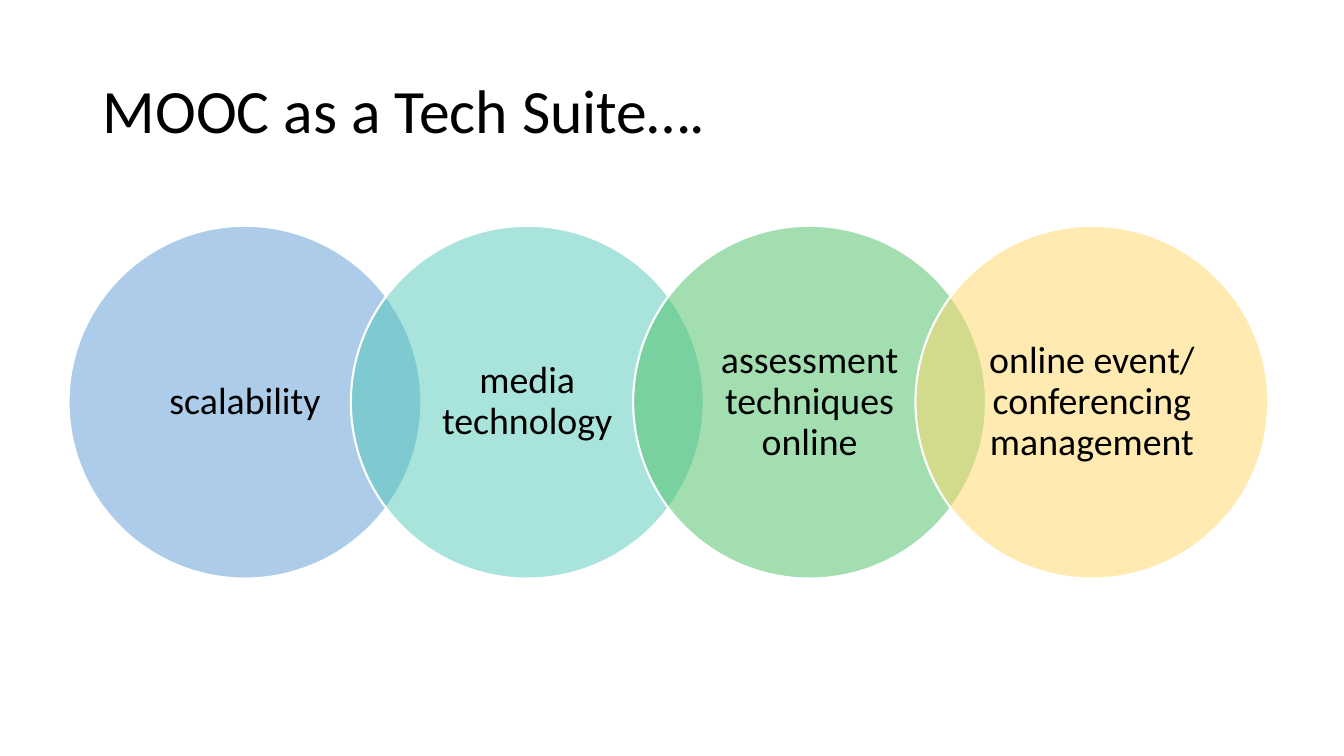
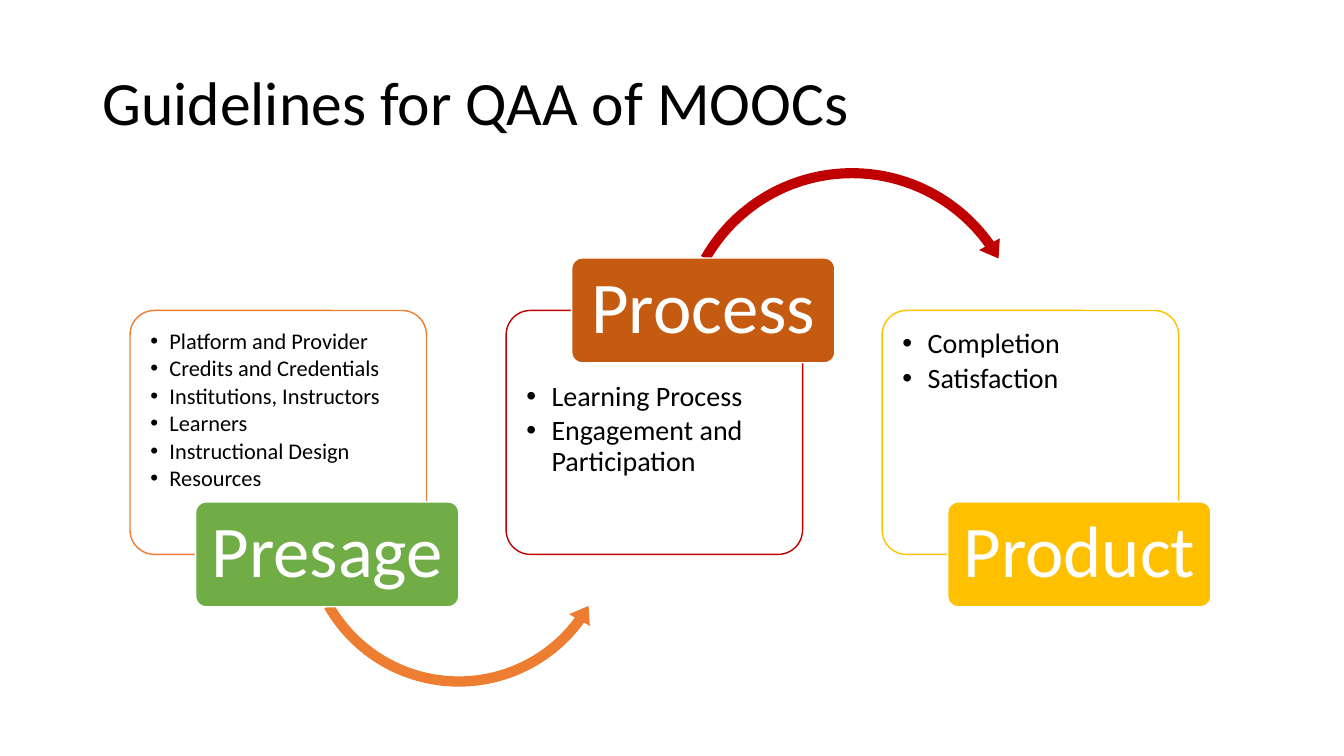
from dataclasses import dataclass

from lxml.etree import SubElement
from pptx import Presentation
from pptx.dml.color import RGBColor
from pptx.enum.shapes import MSO_SHAPE
from pptx.enum.text import MSO_ANCHOR, PP_ALIGN
from pptx.oxml.ns import qn
from pptx.util import Inches, Pt


@dataclass(frozen=True)
class Theme:
    font: str = "Calibri"
    black: str = "000000"
    white: str = "FFFFFF"
    blue: str = "5B9BD5"
    teal: str = "52CAB8"
    mint: str = "49BF64"
    sand: str = "FFD966"
    orange: str = "ED7D31"
    green: str = "70AD47"
    red: str = "C00000"
    rust: str = "C55A11"
    gold: str = "FFC000"
    title: int = 44
    ring: int = 27
    tag: int = 52
    body: int = 20
    small: int = 16


def text(frame, lines, size, color, font, align=PP_ALIGN.LEFT,
         anchor=MSO_ANCHOR.MIDDLE, pad=(0.1, 0.05, 0.1, 0.05), hang=0):
    """Fill a text frame; a hang above zero makes each line a bullet."""
    frame.word_wrap = True
    frame.vertical_anchor = anchor
    (frame.margin_left, frame.margin_top,
     frame.margin_right, frame.margin_bottom) = map(Inches, pad)
    for i, line in enumerate(lines):
        para = frame.add_paragraph() if i else frame.paragraphs[0]
        para.alignment = align
        para.line_spacing = 0.9
        if hang:
            para.space_after = Pt(size * 0.15)
            props = para._p.get_or_add_pPr()
            props.set("marL", str(Inches(hang)))
            props.set("indent", str(-Inches(hang)))
            SubElement(props, qn("a:buFont"), typeface="Arial")
            SubElement(props, qn("a:buChar"), char="•")
        run = para.add_run()
        run.text = line
        run.font.name = font
        run.font.size = Pt(size)
        run.font.color.rgb = RGBColor.from_string(color)


class Deck:
    def __init__(self, look):
        self.look = look
        self.file = Presentation()
        self.file.slide_width = Inches(13.33)
        self.file.slide_height = Inches(7.5)
        self.slide = None

    def page(self, title, top):
        """Start a slide with its title."""
        self.slide = self.file.slides.add_slide(self.file.slide_layouts[6])
        box = self.slide.shapes.add_textbox(
            Inches(0.92), Inches(top), Inches(11.5), Inches(1.45))
        text(box.text_frame, [title], self.look.title, self.look.black,
             self.look.font)

    def shape(self, kind, at, fill, line=None, width=1, alpha=100, adj=()):
        item = self.slide.shapes.add_shape(kind, *map(Inches, at))
        item.shadow.inherit = False
        for i, value in enumerate(adj):
            item.adjustments[i] = value
        item.fill.solid()
        item.fill.fore_color.rgb = RGBColor.from_string(fill)
        if alpha < 100:
            color = item.element.spPr.find(qn("a:solidFill"))[0]
            SubElement(color, qn("a:alpha"), val=str(alpha * 1000))
        if line:
            item.line.color.rgb = RGBColor.from_string(line)
            item.line.width = Pt(width)
        else:
            item.line.fill.background()
        return item

    def ring(self, left, label, fill):
        look = self.look
        item = self.shape(MSO_SHAPE.OVAL, (left, 2.24, 3.5, 3.5), fill,
                          look.white, width=1.5, alpha=50)
        text(item.text_frame, [label], look.ring, look.black, look.font,
             align=PP_ALIGN.CENTER, pad=(0.19, 0.04, 0.19, 0.04))

    def card(self, at, lines, edge, size, hang, drop):
        look = self.look
        item = self.shape(MSO_SHAPE.ROUNDED_RECTANGLE, at, look.white, edge,
                          alpha=90, adj=[0.1])
        text(item.text_frame, lines, size, look.black, look.font,
             anchor=MSO_ANCHOR.TOP, pad=(0.13, drop, 0.13, 0.1), hang=hang)

    def tag(self, left, mid, label, fill):
        """Draw a stage name centred on the height mid."""
        look = self.look
        high = 1.04
        item = self.shape(MSO_SHAPE.ROUNDED_RECTANGLE,
                          (left, mid - high / 2, 2.61, high), fill,
                          look.white, adj=[0.1])
        text(item.text_frame, [label], look.tag, look.white, look.font,
             align=PP_ALIGN.CENTER, pad=(0.1, 0.07, 0.1, 0.07))


def suite(deck):
    look = deck.look
    deck.page("MOOC as a Tech Suite….", 0.4)
    rings = [
        ("scalability", look.blue),
        ("media technology", look.teal),
        ("assessment techniques online", look.mint),
        ("online event/ conferencing management", look.sand),
    ]
    for i, (label, fill) in enumerate(rings):
        deck.ring(0.68 + 2.8 * i, label, fill)


def guide(deck):
    look = deck.look
    deck.page("Guidelines for QAA of MOOCs", 0.32)
    top, wide, high = 3.08, 2.94, 2.42
    # Each stage: name, tag fill, card edge, tag on top, type size, hang, lines
    stages = [
        ("Presage", look.green, look.orange, False, look.small, 0.19,
         ["Platform and Provider", "Credits and Credentials",
          "Institutions, Instructors", "Learners", "Instructional Design",
          "Resources"]),
        ("Process", look.rust, look.red, True, look.body, 0.25,
         ["Learning Process", "Engagement and Participation"]),
        ("Product", look.gold, look.gold, False, look.body, 0.25,
         ["Completion", "Satisfaction"]),
    ]
    # Arrows that lead from one stage to the next
    arrows = [
        (MSO_SHAPE.LEFT_CIRCULAR_ARROW, (2.95, 3.68, 3.2, 3.2),
         [0.032, 3.879, 21.634, 90.245, 0.037]),
        (MSO_SHAPE.CIRCULAR_ARROW, (6.66, 1.6, 3.58, 3.58),
         [0.028, 3.449, 194.796, 125.755, 0.033]),
    ]
    for i, (name, fill, edge, above, size, hang, lines) in enumerate(stages):
        left = 1.29 + 3.73 * i
        deck.card((left, top, wide, high), lines, edge, size, hang,
                  0.64 if above else 0.12)
        if i < len(arrows):
            kind, at, adj = arrows[i]
            deck.shape(kind, at, edge, adj=adj)
        deck.tag(left + 0.65, top if above else top + high, name, fill)


def main():
    deck = Deck(Theme())
    suite(deck)
    guide(deck)
    deck.file.save("out.pptx")


if __name__ == "__main__":
    main()
